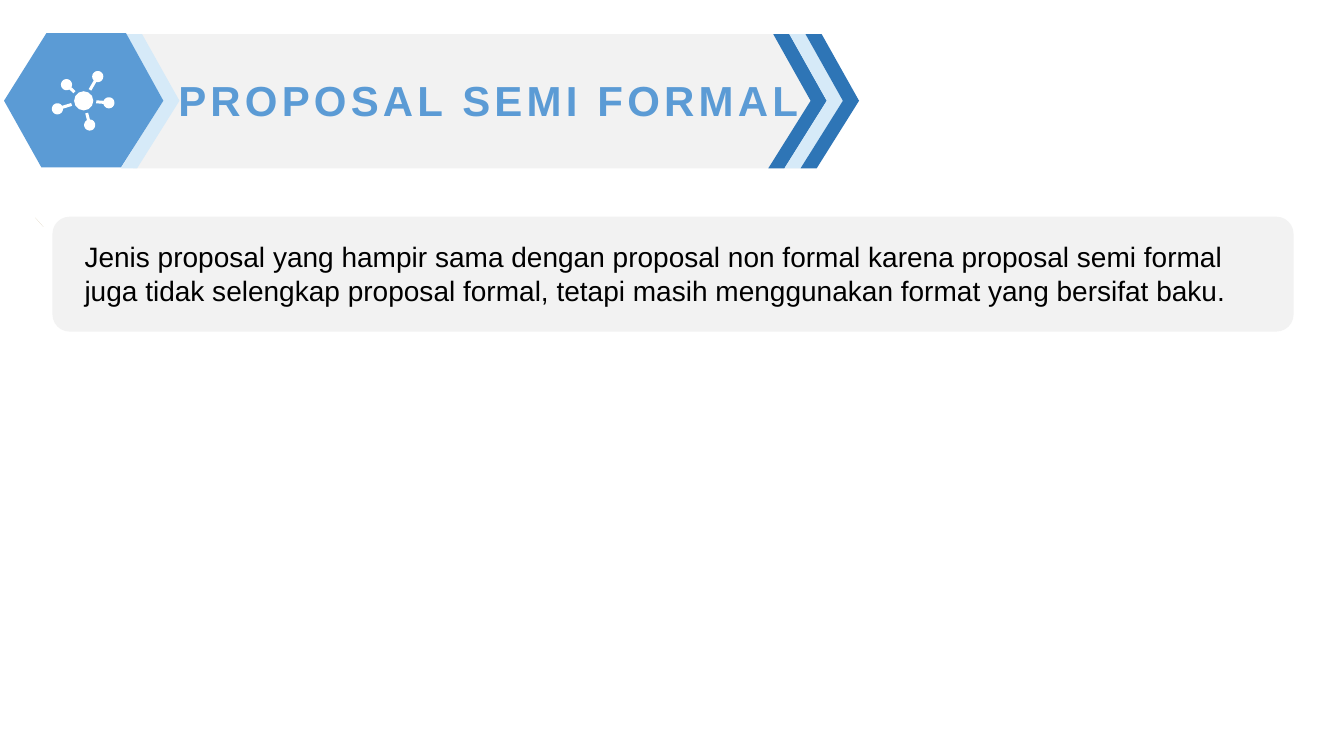
import math
from dataclasses import dataclass

from pptx import Presentation
from pptx.dml.color import RGBColor
from pptx.enum.shapes import MSO_SHAPE
from pptx.enum.text import MSO_AUTO_SIZE
from pptx.util import Pt

RECT = MSO_SHAPE.RECTANGLE
ROUND_RECT = MSO_SHAPE.ROUNDED_RECTANGLE
OVAL = MSO_SHAPE.OVAL
GROW = MSO_AUTO_SIZE.SHAPE_TO_FIT_TEXT
PX = 9144


@dataclass(frozen=True)
class Theme:
    panel: str = "F2F2F2"
    blue: str = "5B9BD5"
    dark: str = "2E75B6"
    pale: str = "D6EAF8"
    sand: str = "C9B997"
    white: str = "FFFFFF"
    text: str = "000000"
    font: str = "Arial"
    title_size: int = 30
    body_size: int = 20
    title_spacing: int = 3


THEME = Theme()


def emu(*lengths):
    return [round(length * PX) for length in lengths]


def paint(sp, color):
    sp.shadow.inherit = False
    sp.fill.solid()
    sp.fill.fore_color.rgb = RGBColor.from_string(color)
    sp.line.fill.background()
    return sp


def add_preset(s, kind, box, color):
    return paint(s.shapes.add_shape(kind, *emu(*box)), color)


def add_polygon(s, x, y, points, color):
    corners = [emu(x + dx, y + dy) for dx, dy in points]
    builder = s.shapes.build_freeform(*corners[0])
    builder.add_line_segments(corners[1:], close=True)
    return paint(builder.convert_to_shape(), color)


def add_text(s, box, text, size, color, bold=False, spacing=0):
    tf = s.shapes.add_textbox(*emu(*box)).text_frame
    tf.word_wrap = True
    tf.auto_size = GROW
    p = tf.paragraphs[0]
    r = p.add_run()
    r.text = text
    p.font.name = THEME.font
    p.font.size = Pt(size)
    p.font.bold = bold
    p.font.color.rgb = RGBColor.from_string(color)
    if spacing:
        r._r.get_or_add_rPr().set("spc", str(spacing * 100))


def add_chevron(s, x, y, color):
    points = [(5, 0), (21, 0), (58, 66), (16, 133), (0, 133), (42, 66)]
    add_polygon(s, x, y, points, color)


def add_network_icon(s, x, y):
    hub, node, gap, half_spoke = 9.5, 5.5, 12.5, 1.5
    add_preset(s, OVAL, (x - hub, y - hub, 2 * hub, 2 * hub), THEME.white)
    centers = [(-17, -16), (14, -24), (25, 2), (6, 24), (-26, 8)]
    for cx, cy in centers:
        inward = math.atan2(-cy, -cx)
        opening = math.asin(half_spoke / node)
        reach = math.hypot(cx, cy) - gap
        steps = 24
        sweep = 2 * (math.pi - opening) / steps
        local = [(node * math.cos(opening + i * sweep),
                  node * math.sin(opening + i * sweep))
                 for i in range(steps + 1)]
        local += [(reach, -half_spoke), (reach, half_spoke)]
        cos, sin = math.cos(inward), math.sin(inward)
        points = [(cx + u * cos - v * sin, cy + u * sin + v * cos)
                  for u, v in local]
        add_polygon(s, x, y, points, THEME.white)


def add_header(s, x, y, w, h, title):
    add_preset(s, RECT, (x + 128, y, w - 177, h), THEME.panel)
    add_chevron(s, x + 116, y, THEME.pale)
    colors = (THEME.dark, THEME.pale, THEME.dark)
    for i, color in enumerate(colors):
        add_chevron(s, x + w - 90 + 16 * i, y, color)
    hexagon = [(42, 0), (121, 0), (158, 67), (116, 133), (37, 133), (0, 67)]
    add_polygon(s, x, y - 1, hexagon, THEME.blue)
    add_text(s, (x + 163, y + 35, 690, 61), title, THEME.title_size,
             THEME.blue, True, THEME.title_spacing)
    add_network_icon(s, x + 79, y + 66)


def add_definition(s, x, y, w, h, text):
    panel = add_preset(s, ROUND_RECT, (x, y, w, h), THEME.panel)
    panel.adjustments[0] = 0.15
    add_polygon(s, x - 17, y + 1, [(0, 0), (8, 9), (8, 9)], THEME.sand)
    add_text(s, (x + 22, y + 18, w - 37, h - 3), text,
             THEME.body_size, THEME.text)


def main():
    prs = Presentation()
    prs.slide_width, prs.slide_height = emu(1333, 750)
    s = prs.slides.add_slide(prs.slide_layouts[6])
    add_definition(
        s, 52, 215, 1231, 114,
        "Jenis proposal yang hampir sama dengan proposal non formal karena "
        "proposal semi formal juga tidak selengkap proposal formal, tetapi "
        "masih menggunakan format yang bersifat baku.")
    add_header(s, 4, 34, 848, 133, "PROPOSAL SEMI FORMAL")
    prs.save("out.pptx")


if __name__ == "__main__":
    main()
